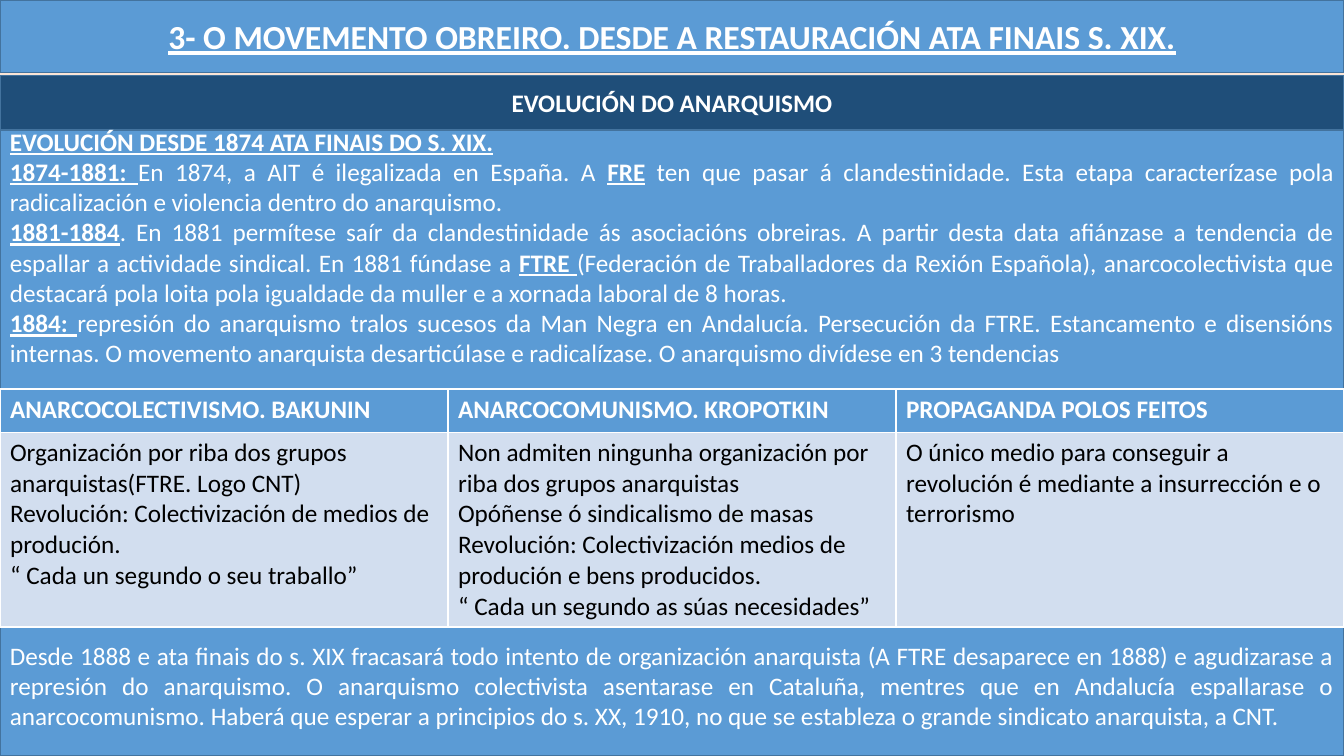
import pptx
import pptx.util
import pptx.dml.color
import pptx.enum.shapes
import pptx.enum.text

Inches = pptx.util.Inches
Pt = pptx.util.Pt
ALIGN = pptx.enum.text.PP_ALIGN


def colour(value):
    return pptx.dml.color.RGBColor.from_string(value)


def format_span(span, size, value, bold=False, underline=False):
    span.font.name = "Calibri"
    span.font.size = Pt(size)
    span.font.color.rgb = colour(value)
    span.font.bold = bold
    span.font.underline = underline


deck = pptx.Presentation()
deck.slide_width = Inches(13.33)
deck.slide_height = Inches(7.5)
page = deck.slides.add_slide(deck.slide_layouts[5])
page.background.fill.solid()
page.background.fill.fore_color.rgb = colour("FBE5D6")

title = page.shapes.title
subtitle, history = [
    page.shapes.add_shape(pptx.enum.shapes.MSO_SHAPE.RECTANGLE, 0, 0, 0, 0)
    for _ in range(2)
]
title.text_frame.text = "3- O MOVEMENTO OBREIRO. DESDE A RESTAURACIÓN ATA FINAIS S. XIX."
subtitle.text_frame.text = "EVOLUCIÓN DO ANARQUISMO"

for box, top, height, fill in [
    (title, 0, 0.72, "5B9BD5"),
    (subtitle, 0.75, 0.54, "1F4E79"),
    (history, 1.29, 6.21, "5B9BD5"),
]:
    box.left, box.top = Inches(0), Inches(top)
    box.width, box.height = Inches(13.33), Inches(height)
    box.fill.solid()
    box.fill.fore_color.rgb = colour(fill)
    box.line.color.rgb = colour("43739E")
    box.line.width = Pt(1)
    box.shadow.inherit = False
    box.text_frame.word_wrap = True
    box.text_frame.auto_size = pptx.enum.text.MSO_AUTO_SIZE.NONE
    box.text_frame.vertical_anchor = pptx.enum.text.MSO_ANCHOR.MIDDLE

for box, size, underline in [(title, 24, True), (subtitle, 18, False)]:
    para = box.text_frame.paragraphs[0]
    para.alignment = ALIGN.CENTER
    format_span(para.runs[0], size, "FFFFFF", True, underline)

stages = [
    [("EVOLUCIÓN DESDE 1874 ATA FINAIS DO S. XIX.", True)],
    [
        ("1874-1881: ", True),
        ("En 1874, a AIT é ilegalizada en España. A ", False),
        ("FRE", True),
        (" ten que pasar á clandestinidade. Esta etapa caracterízase pola radicalización "
         "e violencia dentro do anarquismo.", False),
    ],
    [
        ("1881-1884", True),
        (". En 1881 permítese saír da clandestinidade ás asociacións obreiras. A partir "
         "desta data afiánzase a tendencia de espallar a actividade sindical. En 1881 "
         "fúndase a ", False),
        ("FTRE ", True),
        ("(Federación de Traballadores da Rexión Española), anarcocolectivista que "
         "destacará pola loita pola igualdade da muller e a xornada laboral de 8 horas.", False),
    ],
    [
        ("1884: ", True),
        ("represión do anarquismo tralos sucesos da Man Negra en Andalucía. Persecución "
         "da FTRE. Estancamento e disensións internas. O movemento anarquista "
         "desarticúlase e radicalízase. O anarquismo divídese en 3 tendencias", False),
    ],
    [
        ("Desde 1888 e ata finais do s. XIX fracasará todo intento de organización "
         "anarquista (A FTRE desaparece en 1888) e agudizarase a represión do anarquismo. "
         "O anarquismo colectivista asentarase en Cataluña, mentres que en Andalucía "
         "espallarase o anarcocomunismo. Haberá que esperar a principios do s. XX, 1910, "
         "no que se estableza o grande sindicato anarquista, a CNT.", False),
    ],
]
frame = history.text_frame
frame.margin_top = Inches(0)
frame.margin_bottom = Inches(0.29)
for index, stage in enumerate(stages):
    para = frame.add_paragraph() if index else frame.paragraphs[0]
    para.alignment = ALIGN.JUSTIFY
    para.line_spacing = Pt(21.6)
    for words, strong in stage:
        span = para.add_run()
        span.text = words
        format_span(span, 18, "FFFFFF", strong, strong)
para.space_before = Pt(9 * 21.6)

tendencies = [
    ("ANARCOCOLECTIVISMO. BAKUNIN", [
        "Organización por riba dos grupos anarquistas(FTRE. Logo CNT)",
        "Revolución: Colectivización de medios de produción.",
        "“ Cada un segundo o seu traballo”",
    ]),
    ("ANARCOCOMUNISMO. KROPOTKIN", [
        "Non admiten ningunha organización por riba dos grupos anarquistas",
        "Opóñense ó sindicalismo de masas",
        "Revolución: Colectivización medios de produción e bens producidos.",
        "“ Cada un segundo as súas necesidades”",
    ]),
    ("PROPAGANDA POLOS FEITOS", [
        "O único medio para conseguir a revolución é mediante a insurrección e o terrorismo",
    ]),
]
table = page.shapes.add_table(
    2, 3, Inches(0), Inches(3.86), Inches(13.33), Inches(2.33)
).table
table.rows[0].height = Inches(0.43)
table.rows[1].height = Inches(1.9)
for column, (heading, ideas) in enumerate(tendencies):
    for row, words, fill, ink in [
        (0, heading, "5B9BD5", "FFFFFF"),
        (1, "\n".join(ideas), "D2DEEF", "000000"),
    ]:
        cell = table.cell(row, column)
        cell.fill.solid()
        cell.fill.fore_color.rgb = colour(fill)
        cell.text_frame.text = words
        for para in cell.text_frame.paragraphs:
            format_span(para.runs[0], 18, ink, row == 0)

deck.save("out.pptx")
